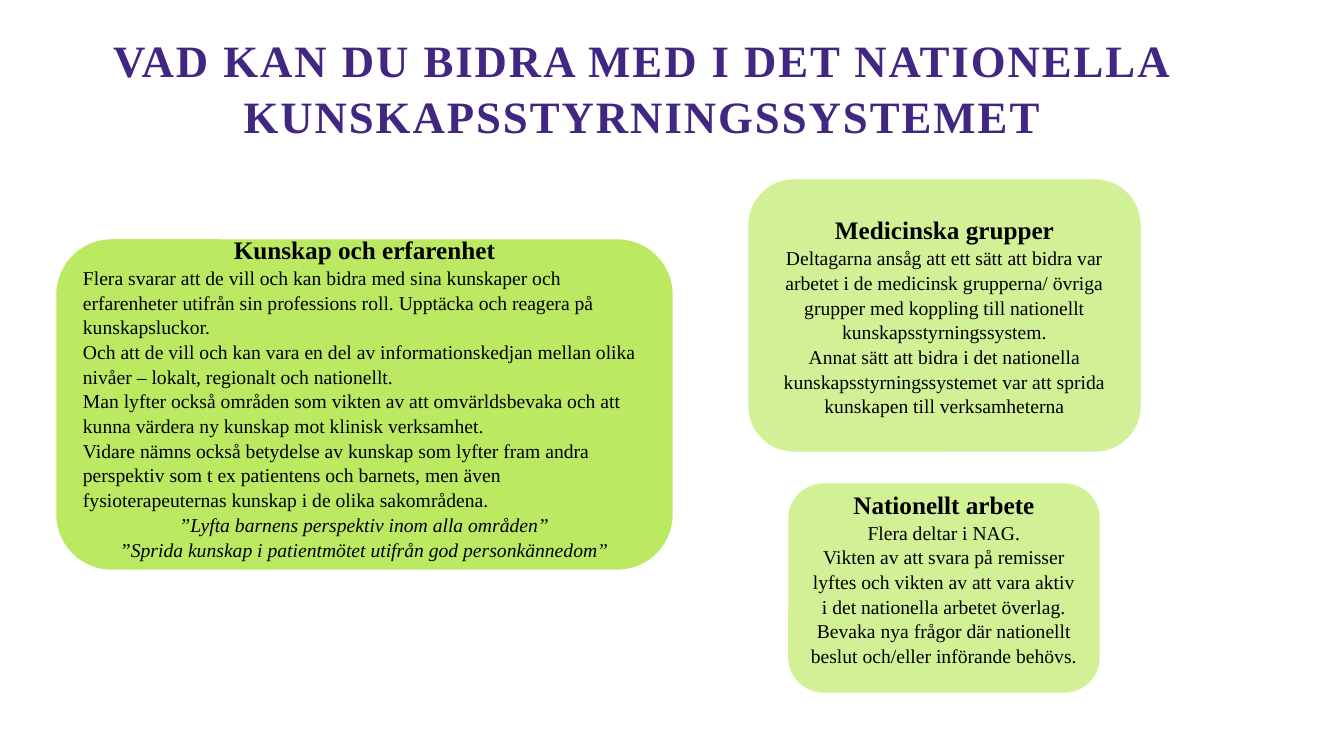
from dataclasses import dataclass

from pptx import Presentation
from pptx.dml.color import RGBColor
from pptx.enum.shapes import MSO_SHAPE
from pptx.enum.text import MSO_ANCHOR, MSO_AUTO_SIZE, PP_ALIGN
from pptx.slide import Slide
from pptx.util import Emu, Pt

EMU_PER_PX = 914400 / 100.8
FONT = "Times New Roman"
PURPLE = "412682"
GREEN = "BBE961"
LIGHT_GREEN = "D2F096"
BLACK = "000000"
LINE_SPACING = 1.05


@dataclass
class Box:
    left: int
    top: int
    width: int
    height: int


@dataclass
class Card:
    box: Box
    color: str
    heading: str
    body: list[str]
    quotes: list[str]
    body_alignment: PP_ALIGN
    bottom_inset: int


CARDS = [
    Card(
        Box(57, 240, 615, 329), GREEN, "Kunskap och erfarenhet",
        [
            "Flera svarar att de vill och kan bidra med sina kunskaper och erfarenheter "
            "utifrån sin professions roll. Upptäcka och reagera på kunskapsluckor.",
            "Och att de vill och kan vara en del av informationskedjan mellan olika "
            "nivåer – lokalt, regionalt och nationellt.",
            "Man lyfter också områden som vikten av att omvärldsbevaka och att kunna "
            "värdera ny kunskap mot klinisk verksamhet.",
            "Vidare nämns också betydelse av kunskap som lyfter fram andra perspektiv "
            "som t ex patientens och barnets, men även fysioterapeuternas kunskap i "
            "de olika sakområdena.",
        ],
        [
            "”Lyfta barnens perspektiv inom alla områden”",
            "”Sprida kunskap i patientmötet utifrån god personkännedom”",
        ],
        PP_ALIGN.LEFT, 15,
    ),
    Card(
        Box(749, 180, 391, 271), LIGHT_GREEN, "Medicinska grupper",
        [
            "Deltagarna ansåg att ett sätt att bidra var arbetet i de medicinsk "
            "grupperna/ övriga grupper med koppling till nationellt "
            "kunskapsstyrningssystem.",
            "Annat sätt att bidra i det nationella kunskapsstyrningssystemet var att "
            "sprida kunskapen till verksamheterna",
        ],
        [], PP_ALIGN.CENTER, 0,
    ),
    Card(
        Box(789, 484, 310, 208), LIGHT_GREEN, "Nationellt arbete",
        [
            "Flera deltar i NAG.",
            "Vikten av att svara på remisser lyftes och vikten av att vara aktiv i det "
            "nationella arbetet överlag.",
            "Bevaka nya frågor där nationellt beslut och/eller införande behövs.",
        ],
        [], PP_ALIGN.CENTER, 21,
    ),
]


def px(length: int) -> Emu:
    return Emu(round(length * EMU_PER_PX))


def rgb(color: str) -> RGBColor:
    return RGBColor.from_string(color)


def format_paragraph(paragraph, size: int, color: str, alignment: PP_ALIGN,
                     bold: bool = False, italic: bool = False) -> None:
    paragraph.alignment = alignment
    paragraph.line_spacing = LINE_SPACING
    font = paragraph.font
    font.name = FONT
    font.size = Pt(size)
    font.bold = bold
    font.italic = italic
    font.color.rgb = rgb(color)


def add_title(slide: Slide, text: str, box: Box) -> None:
    title = slide.shapes.title
    title.left, title.top = px(box.left), px(box.top)
    title.width, title.height = px(box.width), px(box.height)
    frame = title.text_frame
    frame.text = text
    frame.word_wrap = True
    frame.auto_size = MSO_AUTO_SIZE.NONE
    frame.vertical_anchor = MSO_ANCHOR.BOTTOM
    paragraph = frame.paragraphs[0]
    format_paragraph(paragraph, 32, PURPLE, PP_ALIGN.CENTER, bold=True)
    paragraph.runs[0].font._element.set("spc", "140")


def add_card(slide: Slide, card: Card) -> None:
    box = card.box
    shape = slide.shapes.add_shape(
        MSO_SHAPE.ROUNDED_RECTANGLE,
        px(box.left), px(box.top), px(box.width), px(box.height),
    )
    shape.shadow.inherit = False
    shape.fill.solid()
    shape.fill.fore_color.rgb = rgb(card.color)
    shape.line.color.rgb = rgb(card.color)
    shape.line.width = Pt(1)

    frame = shape.text_frame
    frame.word_wrap = True
    frame.vertical_anchor = MSO_ANCHOR.MIDDLE
    frame.margin_top = 0
    frame.margin_bottom = px(card.bottom_inset)
    frame.text = "\n".join([card.heading, *card.body, *card.quotes])
    heading, *others = frame.paragraphs
    format_paragraph(heading, 18, BLACK, PP_ALIGN.CENTER, bold=True)
    for index, paragraph in enumerate(others):
        is_quote = index >= len(card.body)
        alignment = PP_ALIGN.CENTER if is_quote else card.body_alignment
        format_paragraph(paragraph, 14, BLACK, alignment, italic=is_quote)


def main() -> None:
    presentation = Presentation()
    presentation.slide_width, presentation.slide_height = px(1344), px(756)
    slide = presentation.slides.add_slide(presentation.slide_layouts[5])
    add_title(
        slide,
        "VAD KAN DU BIDRA MED I DET NATIONELLA KUNSKAPSSTYRNINGSSYSTEMET",
        Box(70, 25, 1144, 123),
    )
    for card in CARDS:
        add_card(slide, card)
    presentation.save("out.pptx")


if __name__ == "__main__":
    main()
